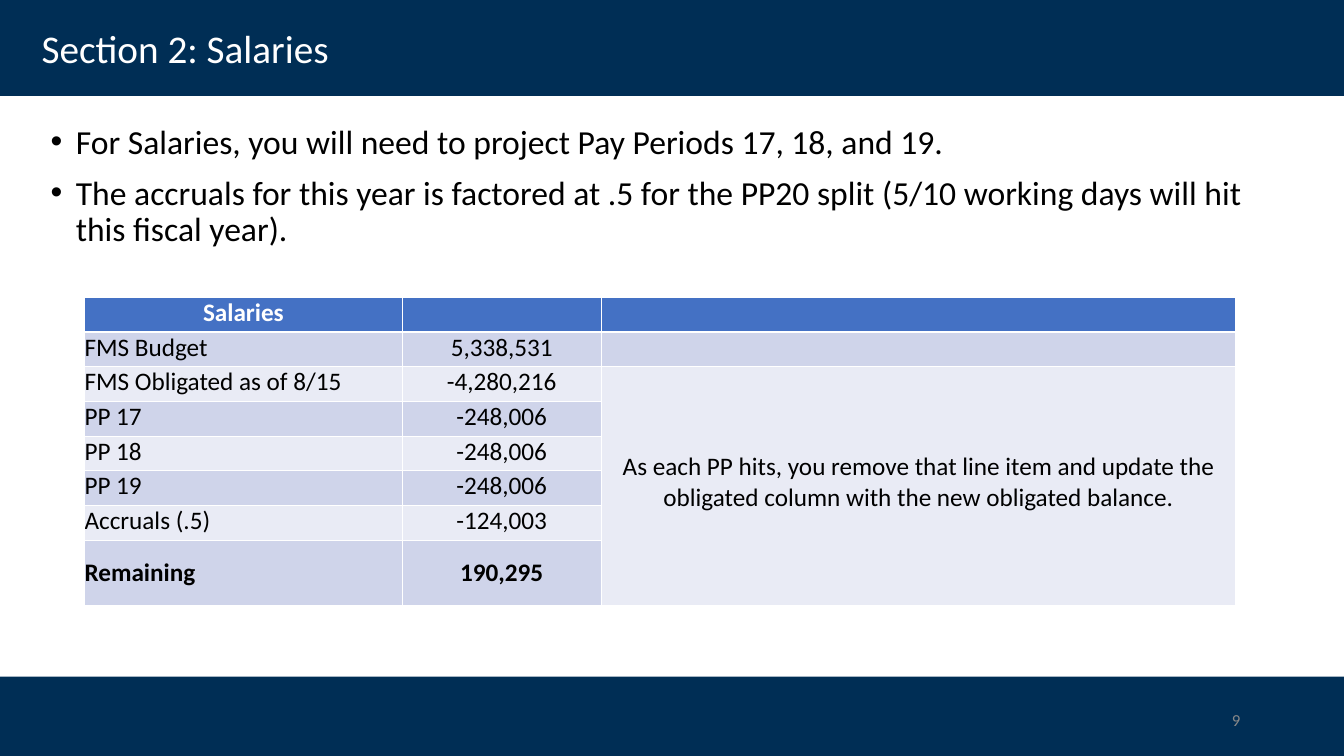
from pptx import Presentation
from pptx.dml.color import RGBColor
from pptx.enum.shapes import MSO_SHAPE
from pptx.enum.text import MSO_ANCHOR, MSO_AUTO_SIZE, PP_ALIGN
from pptx.util import Pt

RECT = MSO_SHAPE.RECTANGLE
TOP, MIDDLE = MSO_ANCHOR.TOP, MSO_ANCHOR.MIDDLE
LEFT, CENTER = PP_ALIGN.LEFT, PP_ALIGN.CENTER
NO_FIT = MSO_AUTO_SIZE.NONE

FONT = "Calibri"
COLORS = {
    "navy": "002E55",
    "white": "FFFFFF",
    "black": "000000",
    "gray": "888888",
    "header": "4471C4",
    "band_dark": "CFD4EA",
    "band_light": "E9EBF5",
}
SLIDE_W, SLIDE_H = 960, 540

BULLETS = [
    "For Salaries, you will need to project Pay Periods 17, 18, and 19.",
    "The accruals for this year is factored at .5 for the PP20 split "
    "(5/10 working days will hit this fiscal year).",
]
SALARIES = [
    ("Salaries", ""),
    ("FMS Budget", "5,338,531"),
    ("FMS Obligated as of 8/15", "-4,280,216"),
    ("PP 17", "-248,006"),
    ("PP 18", "-248,006"),
    ("PP 19", "-248,006"),
    ("Accruals (.5)", "-124,003"),
    ("Remaining", "190,295"),
]
NOTE = ("As each PP hits, you remove that line item and update the "
        "obligated column with the new obligated balance.")
COL_WIDTHS = [227, 142, 453.5]
ROW_H, LAST_ROW_H = 24.8, 46.8


def rgb(name):
    return RGBColor.from_string(COLORS[name])


def style_paragraph(p, size, color, bold=False, align=LEFT):
    p.alignment = align
    for r in p.runs:
        r.font.name = FONT
        r.font.size = Pt(size)
        r.font.bold = bold
        r.font.color.rgb = rgb(color)


def place(sp, left, top, width, height):
    sp.left, sp.top, sp.width, sp.height = Pt(left), Pt(top), Pt(width), Pt(height)


def set_frame(tf, top_inset=0):
    tf.margin_left = tf.margin_right = tf.margin_bottom = 0
    tf.margin_top = Pt(top_inset)
    tf.vertical_anchor = TOP
    tf.word_wrap = True
    tf.auto_size = NO_FIT


def add_band(slide, top, height):
    sp = slide.shapes.add_shape(RECT, 0, Pt(top), Pt(SLIDE_W), Pt(height))
    sp.shadow.inherit = False
    sp.fill.solid()
    sp.fill.fore_color.rgb = rgb("navy")
    sp.line.fill.background()
    slide.shapes._spTree.insert(2, sp._element)  # behind the placeholders


def fill_title(slide, text):
    sp = slide.shapes.title
    place(sp, 29.8, 12.2, 900, 45.4)
    set_frame(sp.text_frame, 5)
    sp.text_frame.text = text
    style_paragraph(sp.text_frame.paragraphs[0], 28, "white")


def fill_bullets(slide, items):
    sp = slide.placeholders[1]
    place(sp, 35.5, 78.5, 855, 100)
    tf = sp.text_frame
    set_frame(tf, 8)
    for i, item in enumerate(items):
        p = tf.add_paragraph() if i else tf.paragraphs[0]
        p.text = item
        pPr = p._p.get_or_add_pPr()
        pPr.set("marL", str(Pt(18.7)))
        pPr.set("indent", str(-Pt(18)))
        p.space_before = Pt(10.4 if i else 0)
        if i:
            p.line_spacing = Pt(25.9)
        style_paragraph(p, 24, "black")


def fill_cell(cell, text, fill, color="black", bold=False, align=LEFT):
    cell.margin_left = cell.margin_right = 0
    cell.margin_top = cell.margin_bottom = 0
    cell.fill.solid()
    cell.fill.fore_color.rgb = rgb(fill)
    cell.text = text
    style_paragraph(cell.text_frame.paragraphs[0], 18, color, bold, align)


def add_salary_table(slide):
    last = len(SALARIES) - 1
    height = last * ROW_H + LAST_ROW_H
    table = slide.shapes.add_table(len(SALARIES), len(COL_WIDTHS), Pt(60.4), Pt(212.4),
                                   Pt(sum(COL_WIDTHS)), Pt(height)).table
    for col, width in zip(table.columns, COL_WIDTHS):
        col.width = Pt(width)

    # Labels and amounts
    for i, (label, amount) in enumerate(SALARIES):
        table.rows[i].height = Pt(LAST_ROW_H if i == last else ROW_H)
        fill = "header" if i == 0 else "band_dark" if i % 2 else "band_light"
        color = "white" if i == 0 else "black"
        bold = i in (0, last)
        fill_cell(table.cell(i, 0), label, fill, color, bold, LEFT if i else CENTER)
        fill_cell(table.cell(i, 1), amount, fill, color, bold, CENTER)
        fill_cell(table.cell(i, 2), "", fill if i < 2 else "band_light")
    for j in (0, 1):
        table.cell(last, j).vertical_anchor = MIDDLE

    # Note beside the obligations
    note = table.cell(2, 2)
    note.merge(table.cell(last, 2))
    fill_cell(note, NOTE, "band_light", align=CENTER)
    note.vertical_anchor = MIDDLE
    note.margin_bottom = Pt(6)


def add_page_number(slide, number):
    sp = slide.shapes.add_textbox(Pt(880), Pt(506), Pt(12), Pt(17))
    set_frame(sp.text_frame, 1)
    sp.text_frame.text = number
    style_paragraph(sp.text_frame.paragraphs[0], 12, "gray")


def main():
    prs = Presentation()
    prs.slide_width, prs.slide_height = Pt(SLIDE_W), Pt(SLIDE_H)
    slide = prs.slides.add_slide(prs.slide_layouts[1])

    # Header and footer bands
    add_band(slide, 0, 68.6)
    add_band(slide, 483.4, SLIDE_H - 483.4)

    # Content
    fill_title(slide, "Section 2: Salaries")
    fill_bullets(slide, BULLETS)
    add_salary_table(slide)
    add_page_number(slide, "9")

    prs.save("out.pptx")


if __name__ == "__main__":
    main()
